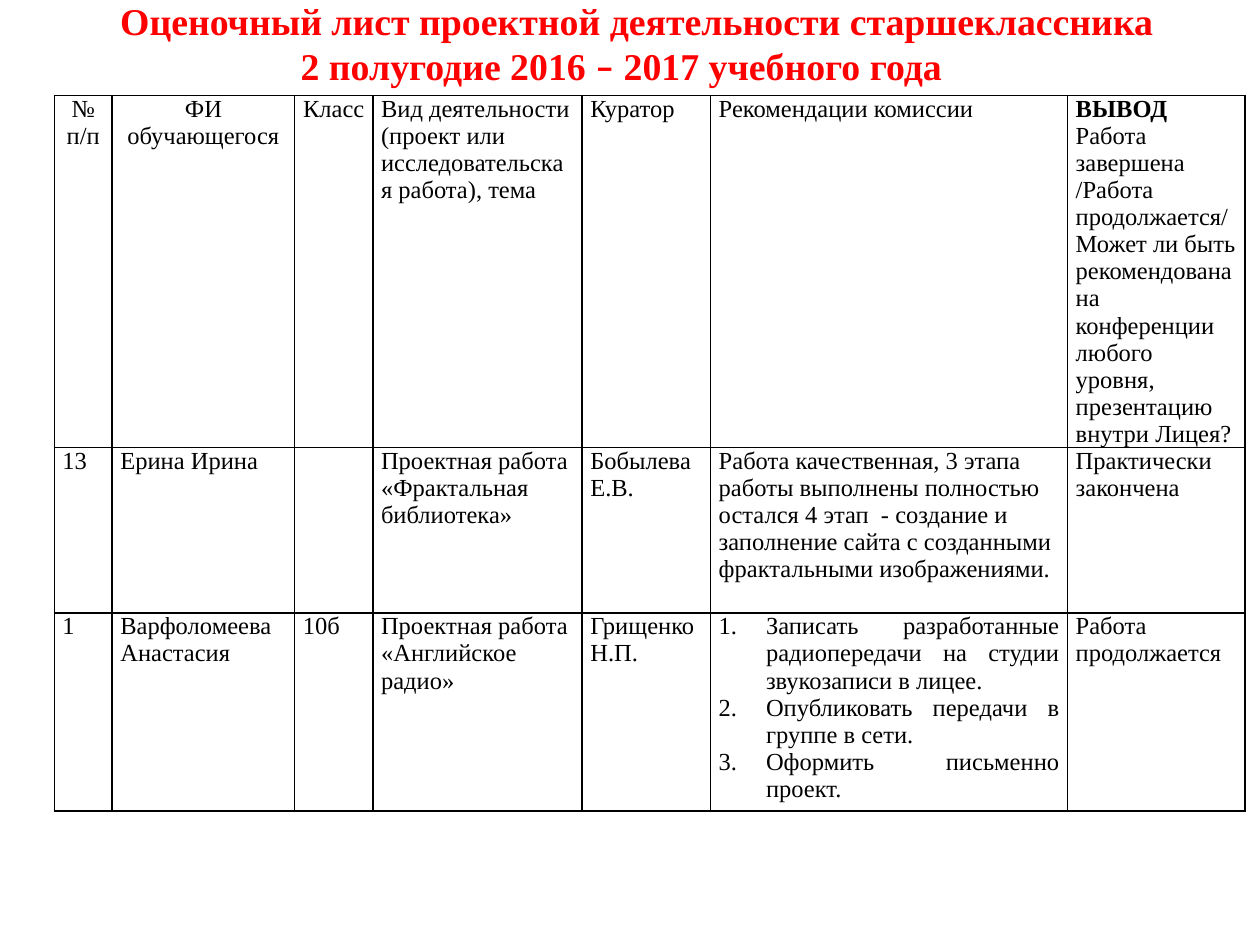
import pptx
import pptx.dml.color
import pptx.enum.text
import pptx.oxml
import pptx.oxml.ns
import pptx.util

Pt = pptx.util.Pt
ALIGN = pptx.enum.text.PP_ALIGN
RED = pptx.dml.color.RGBColor(0xFF, 0x00, 0x00)
BLACK = pptx.dml.color.RGBColor(0x00, 0x00, 0x00)
SERIF = "Times New Roman"

COLUMN_WIDTHS = [33.1, 104.3, 44.7, 119.6, 73.4, 204, 101.4]
ROW_HEIGHTS = [201, 94.5, 113]
CENTRED_HEADERS = 3

# Each cell is one text; line breaks separate its paragraphs
ROWS = [
    ["№ п/п", "ФИ обучающегося", "Класс",
     "Вид деятельности (проект или исследовательская работа), тема",
     "Куратор", "Рекомендации комиссии",
     "ВЫВОД\nРабота завершена /Работа продолжается/\n"
     "Может ли быть рекомендована на конференции любого уровня, "
     "презентацию внутри Лицея?"],
    ["13", "Ерина Ирина", "",
     "Проектная работа\n«Фрактальная библиотека»", "Бобылева Е.В.",
     "Работа качественная, 3 этапа работы выполнены полностью остался "
     "4 этап  - создание и заполнение сайта с созданными фрактальными "
     "изображениями.",
     "Практически закончена"],
    ["1", "Варфоломеева Анастасия", "10б",
     "Проектная работа «Английское радио»", "Грищенко Н.П.",
     "Записать разработанные радиопередачи на студии звукозаписи в лицее.\n"
     "Опубликовать передачи в группе в сети.\n"
     "Оформить письменно проект.",
     "Работа продолжается"],
]


def format_run(run, size, color, bold=False, name=SERIF):
    run.font.size = Pt(size)
    run.font.color.rgb = color
    run.font.bold = bold
    run.font.name = name


def fill_title(title):
    title.left, title.top, title.width, title.height = Pt(31), Pt(9.4), Pt(648), Pt(57)
    frame = title.text_frame
    frame.auto_size = pptx.enum.text.MSO_AUTO_SIZE.NONE
    frame.word_wrap = True
    frame.vertical_anchor = pptx.enum.text.MSO_ANCHOR.MIDDLE
    # The bottom margin lifts the two lines above the table
    frame.margin_top, frame.margin_bottom = 0, Pt(27)
    paragraph = frame.paragraphs[0]
    paragraph.alignment = ALIGN.CENTER
    paragraph._p.get_or_add_pPr().set("indent", str(Pt(18)))
    paragraph.add_run().text = "Оценочный лист проектной деятельности старшеклассника"
    paragraph.add_line_break()
    for text in ("2 полугодие 2016 ", "–", " 2017 учебного года"):
        paragraph.add_run().text = text
    for run in paragraph.runs:
        format_run(run, 21.6, RED, True, "Calibri" if run.text == "–" else SERIF)


def add_borders(cell):
    properties = cell._tc.get_or_add_tcPr()
    for side in ("lnL", "lnR", "lnT", "lnB"):
        properties.append(pptx.oxml.parse_xml(
            f'<a:{side} {pptx.oxml.ns.nsdecls("a")} w="{Pt(1)}"><a:solidFill>'
            f'<a:srgbClr val="{BLACK}"/></a:solidFill></a:{side}>'))


def number_paragraph(paragraph):
    paragraph.alignment = ALIGN.JUSTIFY
    properties = paragraph._p.get_or_add_pPr()
    properties.set("marL", str(Pt(27)))
    properties.set("indent", str(-Pt(27)))
    properties.append(pptx.oxml.parse_xml(
        f'<a:buAutoNum {pptx.oxml.ns.nsdecls("a")} type="arabicPeriod"/>'))


def fill_cell(cell, text):
    cell.margin_left = cell.margin_right = Pt(4.7)
    cell.margin_top = cell.margin_bottom = 0
    add_borders(cell)
    cell.fill.background()
    cell.text_frame.text = text
    for paragraph in cell.text_frame.paragraphs:
        paragraph.alignment = ALIGN.LEFT
        for run in paragraph.runs:
            format_run(run, 14, BLACK, bold=run.text == "ВЫВОД")


def add_score_table(slide):
    table = slide.shapes.add_table(
        len(ROWS), len(COLUMN_WIDTHS), Pt(31), Pt(54.6),
        Pt(sum(COLUMN_WIDTHS)), Pt(sum(ROW_HEIGHTS))).table
    table.first_row = table.horz_banding = False
    for column, width in zip(table.columns, COLUMN_WIDTHS):
        column.width = Pt(width)
    for row, height, texts in zip(table.rows, ROW_HEIGHTS, ROWS):
        row.height = Pt(height)
        for cell, text in zip(row.cells, texts):
            fill_cell(cell, text)
    # Centred headers and the numbered recommendations
    for column in range(CENTRED_HEADERS):
        table.cell(0, column).text_frame.paragraphs[0].alignment = ALIGN.CENTER
    for paragraph in table.cell(2, 5).text_frame.paragraphs:
        number_paragraph(paragraph)


def main():
    presentation = pptx.Presentation()
    presentation.slide_width, presentation.slide_height = Pt(720), Pt(540)
    slide = presentation.slides.add_slide(presentation.slide_layouts[5])
    fill_title(slide.shapes.title)
    add_score_table(slide)
    presentation.save("out.pptx")


if __name__ == "__main__":
    main()
